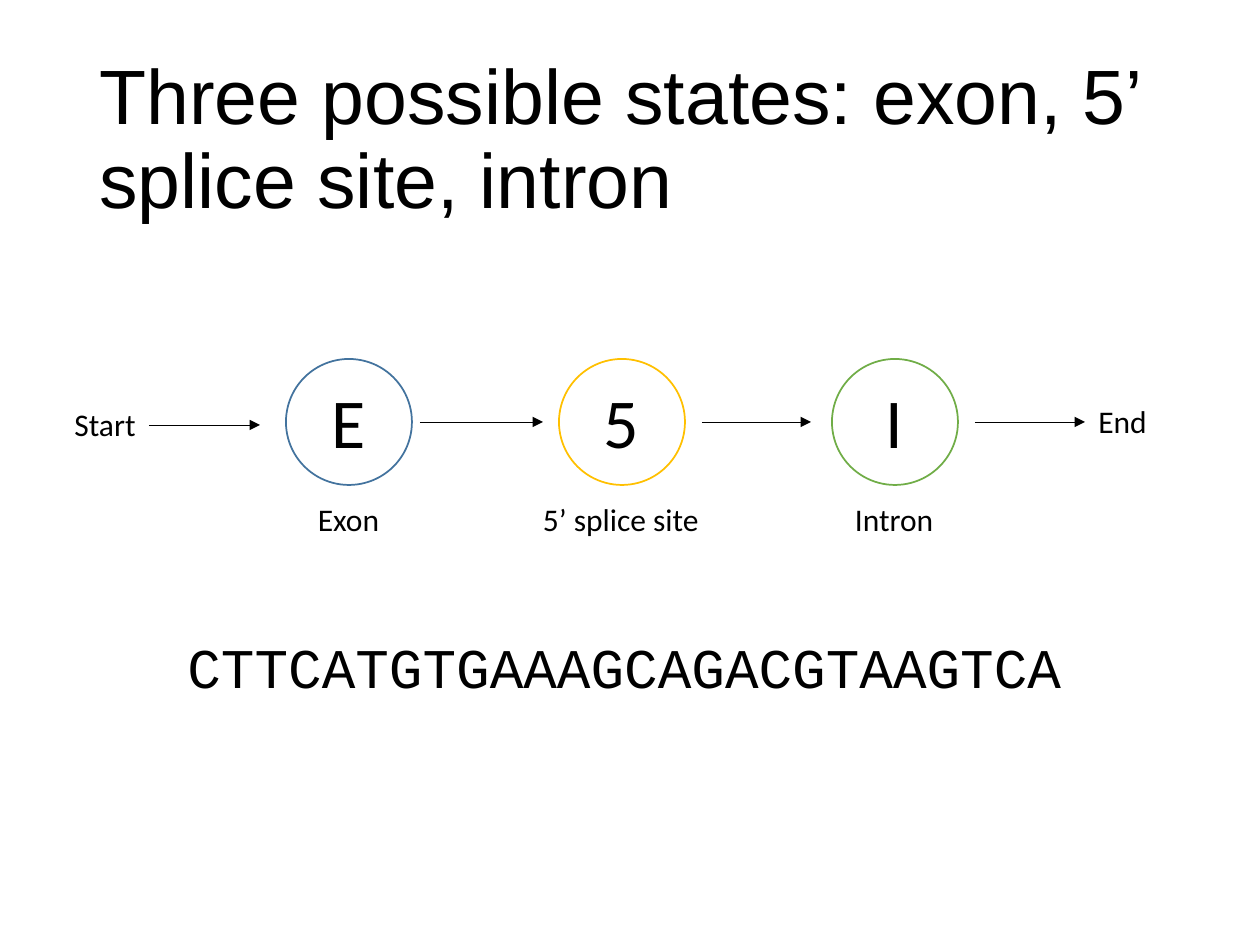
from pptx import Presentation
from pptx.dml.color import RGBColor
from pptx.enum.shapes import MSO_CONNECTOR as CONNECTOR, MSO_SHAPE as SHAPE
from pptx.enum.text import MSO_ANCHOR as ANCHOR, MSO_AUTO_SIZE as AUTO_SIZE
from pptx.oxml.ns import qn
from pptx.util import Pt
from lxml.etree import SubElement

COLORS = {"ink": "000000", "exon": "43739E", "splice": "FFC000", "intron": "70AD47"}


def px(*lengths):
    return [round(length * 914400 / 126) for length in lengths]


def add_text(text, left, top, width, height, size, font="Calibri"):
    box = slide.shapes.add_textbox(*px(left, top, width, height))
    frame = box.text_frame
    frame.word_wrap = False
    frame.auto_size = AUTO_SIZE.SHAPE_TO_FIT_TEXT
    paragraph = frame.paragraphs[0]
    paragraph.text = text
    paragraph.font.size = Pt(size)
    paragraph.font.name = font
    paragraph.font.color.rgb = RGBColor.from_string(COLORS["ink"])
    return frame


prs = Presentation()
prs.slide_width, prs.slide_height = px(1260, 945)
slide = prs.slides.add_slide(prs.slide_layouts[6])

title = add_text("Three possible states: exon, 5’ splice site, intron", 87, 50, 1086, 183, 44, "Arial")
title.word_wrap = True
title.auto_size = AUTO_SIZE.NONE
title.vertical_anchor = ANCHOR.MIDDLE
title.paragraphs[0].line_spacing = 0.9

states = [
    ("E", 60, "Exon", 87, "exon"),
    ("5", 62, "5’ splice site", 183, "splice"),
    ("I", 43, "Intron", 105, "intron"),
]
diameter = 126
for index, (letter, letter_width, label, label_width, color) in enumerate(states):
    center = 349 + index * 273
    circle = slide.shapes.add_shape(SHAPE.OVAL, *px(center - diameter / 2, 359, diameter, diameter))
    circle.shadow.inherit = False
    circle.fill.background()
    circle.line.color.rgb = RGBColor.from_string(COLORS[color])
    circle.line.width = Pt(1)
    add_text(letter, center - letter_width / 2, 372, letter_width, 97, 40)
    add_text(label, center - label_width / 2, 494, label_width, 50, 18)

add_text("Start", 62, 399, 87, 50, 18)
add_text("End", 1086, 396, 74, 50, 18)

for start, end, y in [(149, 260, 425), (420, 543, 422), (702, 811, 422), (975, 1085, 422)]:
    arrow = slide.shapes.add_connector(CONNECTOR.STRAIGHT, *px(start, y, end, y))
    arrow.line.color.rgb = RGBColor.from_string(COLORS["ink"])
    arrow.line.width = Pt(0.5)
    SubElement(arrow.line._get_or_add_ln(), qn("a:tailEnd"), type="triangle")
    SubElement(arrow._element.spPr, qn("a:effectLst"))

add_text("CTTCATGTGAAAGCAGACGTAAGTCA", 175, 626, 910, 81, 32, "Courier New")

prs.save("out.pptx")
